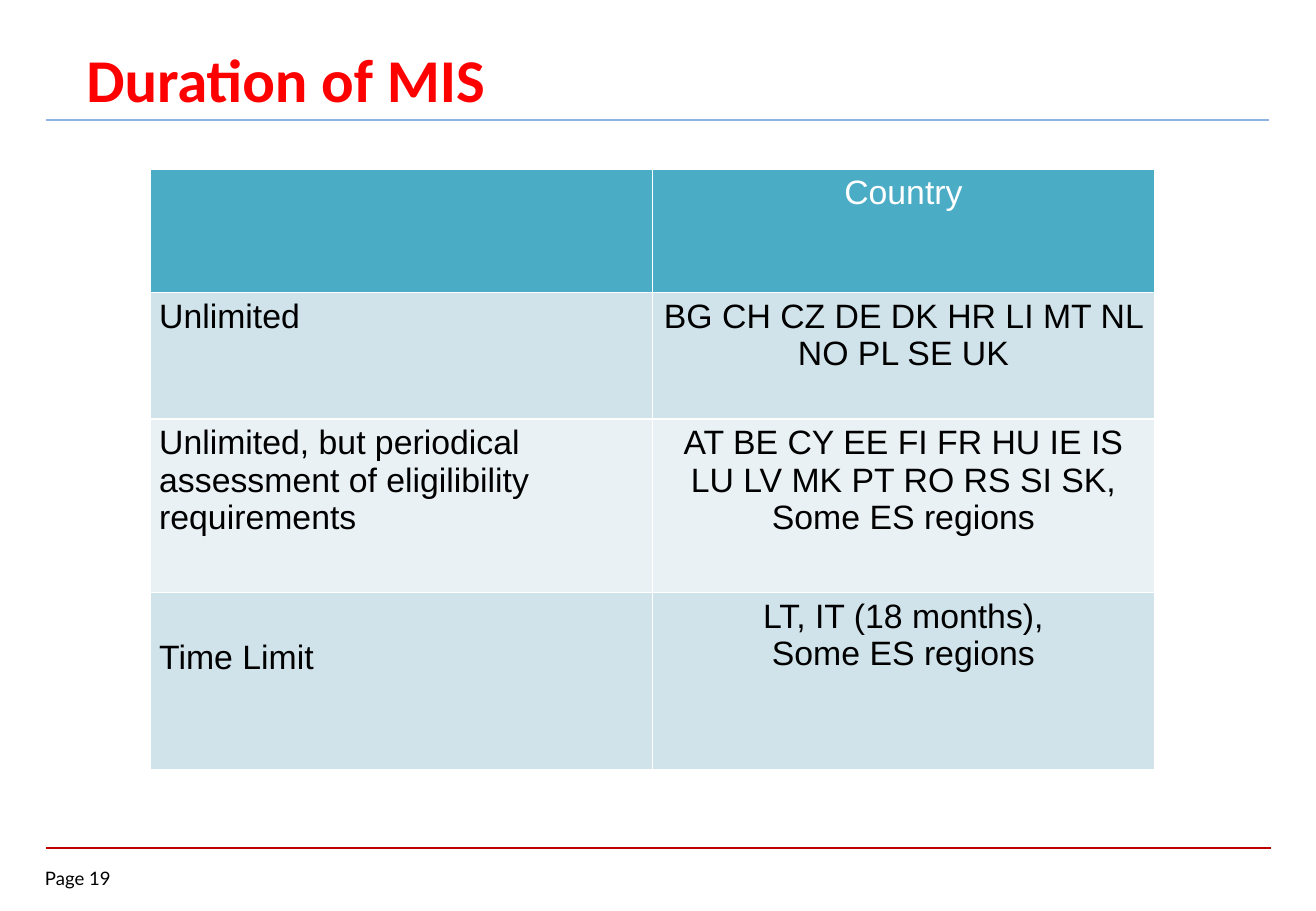
from lxml.etree import SubElement
from pptx import Presentation
from pptx.dml.color import RGBColor
from pptx.enum.shapes import MSO_CONNECTOR
from pptx.enum.text import MSO_ANCHOR, MSO_AUTO_SIZE, PP_ALIGN
from pptx.oxml import parse_xml
from pptx.oxml.ns import nsdecls, qn
from pptx.util import Inches, Pt

TITLE = "Duration of MIS"
PAGE = "Page 19"
DURATIONS = [
    ([], ["Country"]),
    (["Unlimited"], ["BG CH CZ DE DK HR LI MT NL NO PL SE UK"]),
    (["Unlimited, but periodical assessment of eligilibility requirements"],
     ["AT BE CY EE FI FR HU IE IS LU LV MK PT RO RS SI SK, Some ES regions"]),
    (["Time Limit"], ["LT, IT (18 months),", "Some ES regions"]),
]
ROW_HEIGHTS = [1.02, 1.04, 1.43, 1.46]
COLUMN_WIDTH = 4.13
CELL_TOP = 0.04
LOWERED_TOP = {"Time Limit": 0.38}

WHITE = RGBColor(0xFF, 0xFF, 0xFF)
BLACK = RGBColor(0, 0, 0)
RED = RGBColor(0xFF, 0, 0)
DARK_RED = RGBColor(0xC0, 0, 0)
SKY = RGBColor(0x8E, 0xB4, 0xE3)
TEAL = RGBColor(0x4B, 0xAC, 0xC6)
BANDS = [RGBColor(0xE9, 0xF1, 0xF5), RGBColor(0xD0, 0xE3, 0xEA)]


def add_run(paragraph, text, font, size, color, bold=False):
    run = paragraph.add_run()
    run.text = text
    run.font.name = font
    run.font.size = Pt(size)
    run.font.bold = bold
    run.font.color.rgb = color


def set_frame(frame, anchor, margin_x=0, margin_y=0):
    frame.word_wrap = True
    frame.auto_size = MSO_AUTO_SIZE.NONE
    frame.vertical_anchor = anchor
    frame.margin_left = frame.margin_right = Inches(margin_x)
    frame.margin_top = frame.margin_bottom = Inches(margin_y)


def add_rule(slide, right, y, color, width):
    rule = slide.shapes.add_connector(
        MSO_CONNECTOR.STRAIGHT, Inches(0.38), Inches(y), Inches(right), Inches(y))
    rule.line.color.rgb = color
    rule.line.width = Pt(width)
    SubElement(rule._element.spPr, qn("a:effectLst"))


def add_borders(cell):
    properties = cell._tc.get_or_add_tcPr()
    for position, side in enumerate("LRTB"):
        properties.insert(position, parse_xml(
            f'<a:ln{side} {nsdecls("a")} w="{Pt(1)}"><a:solidFill>'
            f'<a:srgbClr val="{WHITE}"/></a:solidFill></a:ln{side}>'))


def fill_cell(cell, lines, row, column):
    cell.fill.solid()
    cell.fill.fore_color.rgb = BANDS[row % 2] if row else TEAL
    add_borders(cell)
    cell.vertical_anchor = MSO_ANCHOR.TOP
    cell.margin_left = cell.margin_right = Inches(0.07)
    cell.margin_bottom = Inches(CELL_TOP)
    cell.margin_top = Inches(LOWERED_TOP.get("".join(lines), CELL_TOP))
    frame = cell.text_frame
    for index, line in enumerate(lines):
        paragraph = frame.add_paragraph() if index else frame.paragraphs[0]
        paragraph.alignment = PP_ALIGN.CENTER if column else PP_ALIGN.LEFT
        add_run(paragraph, line, "Arial", 20, BLACK if row else WHITE)


def add_durations(slide):
    table = slide.shapes.add_table(
        len(DURATIONS), 2, Inches(1.24), Inches(1.39),
        Inches(2 * COLUMN_WIDTH), Inches(sum(ROW_HEIGHTS))).table
    table.first_row = table.horz_banding = False
    for column in table.columns:
        column.width = Inches(COLUMN_WIDTH)
    for row, (height, entries) in enumerate(zip(ROW_HEIGHTS, DURATIONS)):
        table.rows[row].height = Inches(height)
        for column, lines in enumerate(entries):
            fill_cell(table.cell(row, column), lines, row, column)


def main():
    deck = Presentation()
    deck.slide_width, deck.slide_height = Inches(10.83), Inches(7.5)
    slide = deck.slides.add_slide(deck.slide_layouts[5])

    add_rule(slide, 10.46, 6.98, DARK_RED, 1)
    add_rule(slide, 10.44, 0.99, SKY, 1.5)

    page = slide.shapes.add_textbox(
        Inches(0.37), Inches(7.14), Inches(0.73), Inches(0.22)).text_frame
    set_frame(page, MSO_ANCHOR.TOP)
    add_run(page.paragraphs[0], PAGE, "Lato", 11, BLACK)

    add_durations(slide)

    title = slide.shapes.title
    title.left, title.top = Inches(0.61), Inches(0.29)
    title.width, title.height = Inches(9.57), Inches(0.71)
    set_frame(title.text_frame, MSO_ANCHOR.TOP, 0.1, 0.05)
    heading = title.text_frame.paragraphs[0]
    heading.alignment = PP_ALIGN.LEFT
    add_run(heading, TITLE, "Calibri", 36, RED, bold=True)

    deck.save("out.pptx")


if __name__ == "__main__":
    main()
